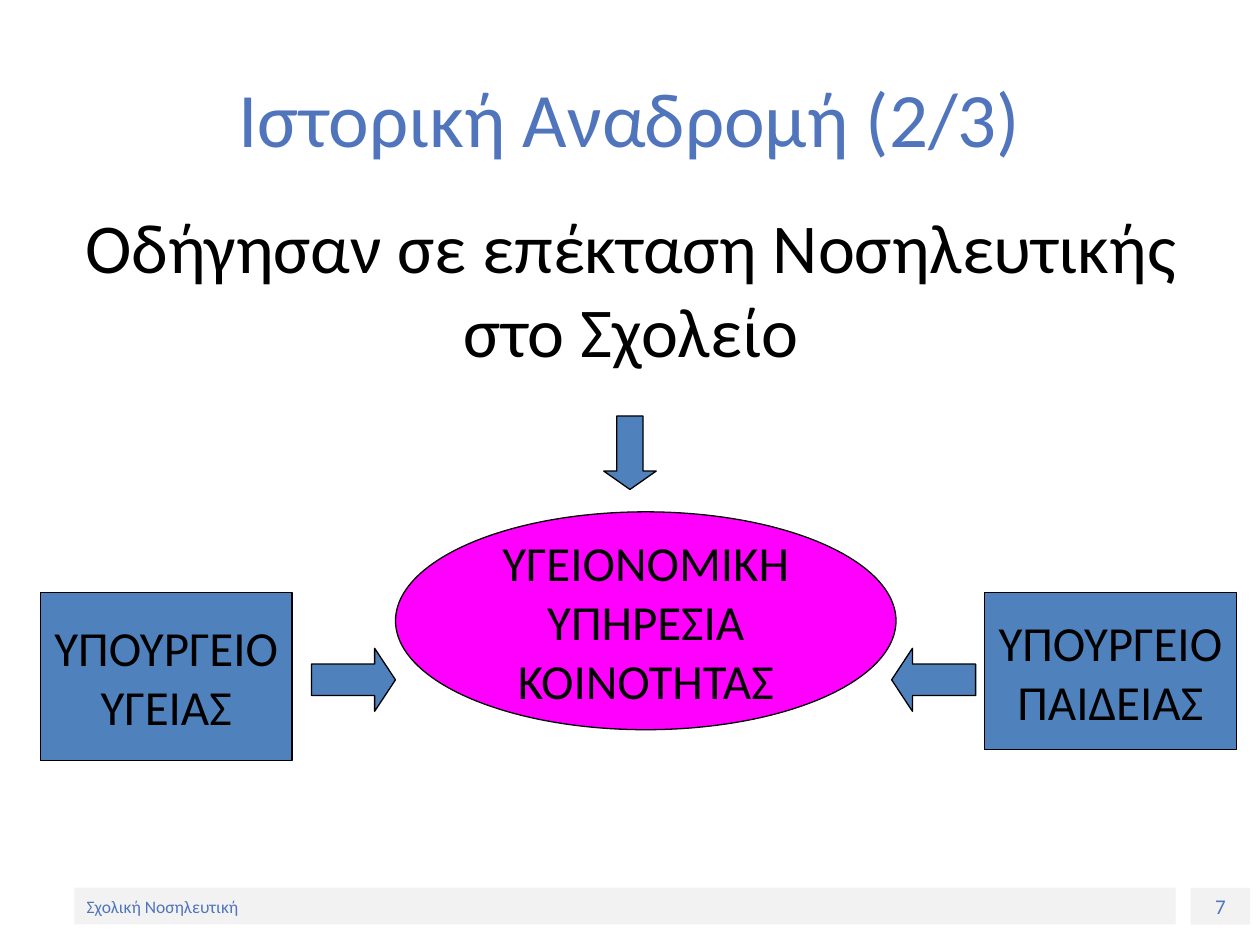
from dataclasses import dataclass

from pptx import Presentation
from pptx.dml.color import RGBColor
from pptx.enum import shapes, text
from pptx.util import Pt

SHAPE = shapes.MSO_SHAPE
CENTER, LEFT = text.PP_ALIGN.CENTER, text.PP_ALIGN.LEFT
MIDDLE, TOP = text.MSO_ANCHOR.MIDDLE, text.MSO_ANCHOR.TOP


@dataclass(frozen=True)
class Theme:
    font: str = "Calibri"
    accent: str = "5075BC"
    ink: str = "000000"
    block: str = "4F81BD"
    highlight: str = "FF00FF"
    band: str = "F2F2F2"
    title: int = 44
    body: int = 40
    label: int = 28
    number: int = 12
    footer: int = 10


THEME = Theme()


def rgb(value):
    return RGBColor.from_string(value)


def write(sp, lines, size, color, align=CENTER, anchor=MIDDLE, wrap=True, before=0):
    tf = sp.text_frame
    tf.word_wrap = wrap
    tf.vertical_anchor = anchor
    for i, line in enumerate(lines):
        p = tf.paragraphs[0] if i == 0 else tf.add_paragraph()
        p.alignment = align
        p.space_before = Pt(before)
        r = p.add_run()
        r.text = line
        r.font.name = THEME.font
        r.font.size = Pt(size)
        r.font.color.rgb = rgb(color)


def add_text(slide, box, line, size, color, **layout):
    sp = slide.shapes.add_textbox(*map(Pt, box))
    write(sp, [line], size, color, **layout)


def add_filled(slide, kind, box, fill, outlined=True):
    sp = slide.shapes.add_shape(kind, *map(Pt, box))
    sp.shadow.inherit = False
    sp.fill.solid()
    sp.fill.fore_color.rgb = rgb(fill)
    if outlined:
        sp.line.color.rgb = rgb(THEME.ink)
        sp.line.width = Pt(0.75)
    else:
        sp.line.fill.background()
    return sp


def add_node(slide, kind, box, fill, lines):
    sp = add_filled(slide, kind, box, fill)
    write(sp, lines, THEME.label, THEME.ink, wrap=False)


def add_arrow(slide, kind, box, head):
    sp = add_filled(slide, kind, box, THEME.block)
    sp.adjustments[0] = 0.5
    sp.adjustments[1] = head


def add_footer_band(slide, box, line, size, align):
    sp = add_filled(slide, SHAPE.RECTANGLE, box, THEME.band, outlined=False)
    write(sp, [line], size, THEME.accent, align=align)


def main():
    prs = Presentation()
    prs.slide_width, prs.slide_height = Pt(720), Pt(540)
    slide = prs.slides.add_slide(prs.slide_layouts[6])

    add_footer_band(slide, (680.4, 507.4, 34, 21), "7", THEME.number, CENTER)
    add_footer_band(slide, (42.5, 507.2, 629.3, 21), "Σχολική Νοσηλευτική",
                    THEME.footer, LEFT)

    add_text(slide, (36, 21.6, 648, 90), "Ιστορική Αναδρομή (2/3)",
             THEME.title, THEME.accent)
    add_text(slide, (36.6, 113, 648, 356.4),
             "Οδήγησαν σε επέκταση Νοσηλευτικής στο Σχολείο",
             THEME.body, THEME.ink, anchor=TOP, before=12)

    add_node(slide, SHAPE.OVAL, (226, 292.5, 286, 124.5), THEME.highlight,
             ["ΥΓΕΙΟΝΟΜΙΚΗ", "ΥΠΗΡΕΣΙΑ", "ΚΟΙΝΟΤΗΤΑΣ"])
    for left, height, ministry in ((23, 96, "ΥΓΕΙΑΣ"), (562.5, 90, "ΠΑΙΔΕΙΑΣ")):
        add_node(slide, SHAPE.RECTANGLE, (left, 338.5, 144, height), THEME.block,
                 ["ΥΠΟΥΡΓΕΙΟ", ministry])

    for kind, left in ((SHAPE.RIGHT_ARROW, 178), (SHAPE.LEFT_ARROW, 509.5)):
        add_arrow(slide, kind, (left, 370.5, 48, 36), 0.33)
    add_arrow(slide, SHAPE.DOWN_ARROW, (345, 237.7, 30, 42), 0.35)

    prs.save("out.pptx")


if __name__ == "__main__":
    main()
